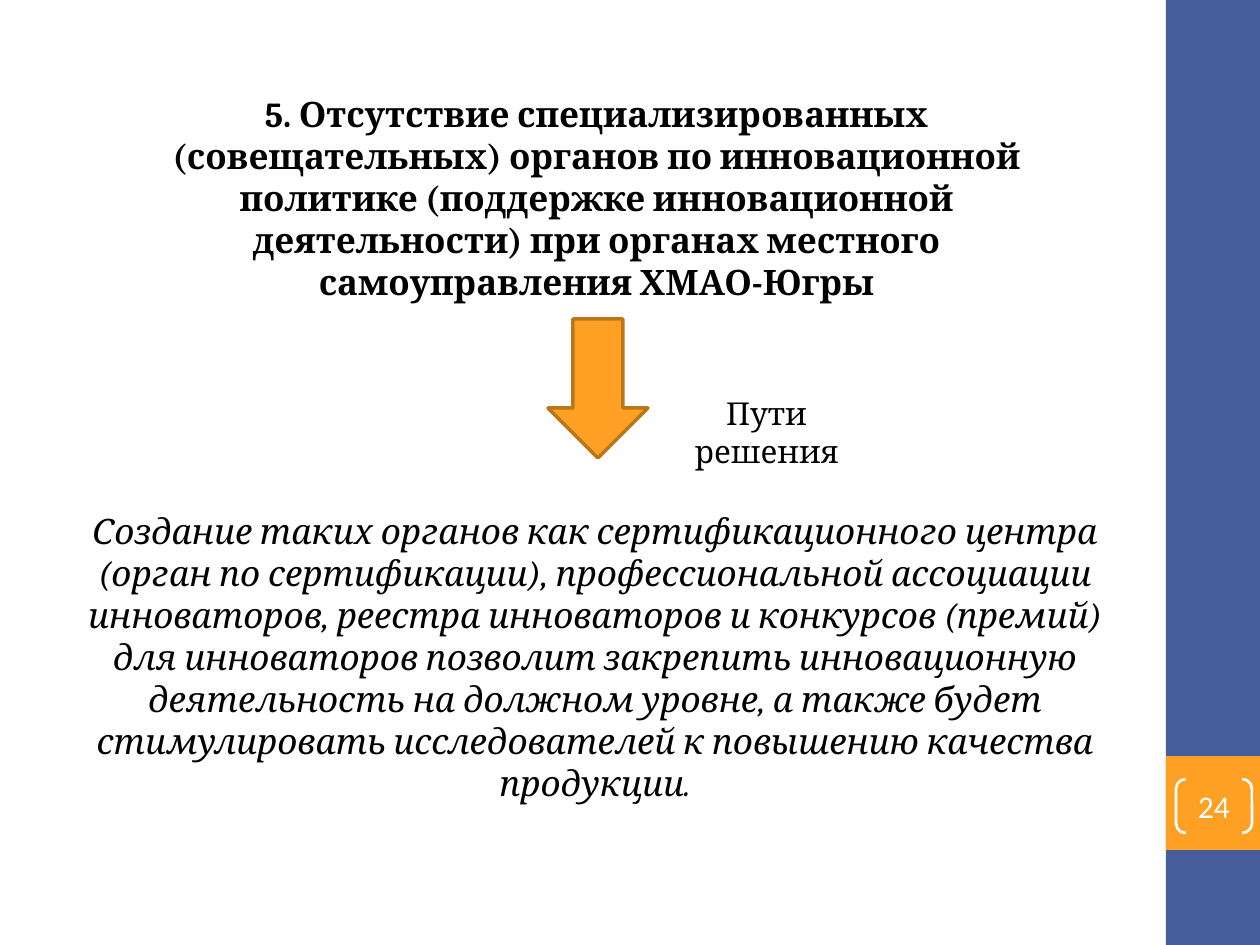
"""Builds the slide on missing advisory bodies and the proposed solution."""
from pptx import Presentation
from pptx import util as u
from pptx.dml.color import RGBColor
from pptx.enum import shapes, text
from pptx.oxml.ns import qn
from lxml import etree

PX = 914400 / 126
BLUE = RGBColor(0x46, 0x5E, 0x9C)
ORANGE = RGBColor(0xFD, 0xA0, 0x23)
BROWN = RGBColor(0xBB, 0x76, 0x1A)
WHITE = RGBColor(255, 255, 255)
BLACK = RGBColor(0, 0, 0)

PROBLEM = ("5. Отсутствие специализированных (совещательных) органов по "
           "инновационной политике (поддержке инновационной деятельности) "
           "при органах местного самоуправления ХМАО-Югры")
SOLUTION = ("Создание таких органов как сертификационного центра (орган по "
            "сертификации), профессиональной ассоциации инноваторов, реестра "
            "инноваторов и конкурсов (премий) для инноваторов позволит "
            "закрепить инновационную деятельность на должном уровне, а также "
            "будет стимулировать исследователей к повышению качества продукции.")


def px(*lengths):
    return [u.Emu(round(n * PX)) for n in lengths]


def place(sp, box):
    sp.left, sp.top, sp.width, sp.height = px(*box)


def add_shape(slide, kind, box, fill=None, line=None, width=1):
    sp = slide.shapes.add_shape(kind, *px(*box))
    sp.shadow.inherit = False
    if fill is None:
        sp.fill.background()
    else:
        sp.fill.solid()
        sp.fill.fore_color.rgb = fill
    if line is None:
        sp.line.fill.background()
    else:
        sp.line.color.rgb = line
        sp.line.width = u.Pt(width)
    return sp


def write(sp, content, size, font="Cambria", color=BLACK, bold=False,
          italic=False, anchor=text.MSO_ANCHOR.TOP):
    tf = sp.text_frame
    tf.word_wrap = True
    tf.auto_size = text.MSO_AUTO_SIZE.NONE
    tf.vertical_anchor = anchor
    p = tf.paragraphs[0]
    p.text = content
    p.alignment = text.PP_ALIGN.CENTER
    p.space_before = u.Pt(0)
    p.font.name, p.font.size = font, u.Pt(size)
    p.font.bold, p.font.italic = bold, italic
    p.font.color.rgb = color
    return p


def remove_bullet(p):
    props = p._p.get_or_add_pPr()
    props.set("marL", "0")
    props.set("indent", "0")
    etree.SubElement(props, qn("a:buNone"))


def add_page_number(slide, number):
    sp = add_shape(slide, shapes.MSO_SHAPE.DOUBLE_BRACKET, (1176, 779, 76, 54),
                   line=WHITE, width=1.5)
    sp.adjustments[0] = 0.18
    tf = sp.text_frame
    tf.margin_left = tf.margin_right = tf.margin_top = tf.margin_bottom = 0
    write(sp, number, 18, "Calibri", WHITE, anchor=text.MSO_ANCHOR.MIDDLE)


def main():
    prs = Presentation()
    prs.slide_width, prs.slide_height = px(1260, 945)
    slide = prs.slides.add_slide(prs.slide_layouts[1])

    add_shape(slide, shapes.MSO_SHAPE.RECTANGLE, (1166, 0, 94, 945), BLUE)
    add_shape(slide, shapes.MSO_SHAPE.RECTANGLE, (1166, 756, 94, 94), ORANGE)
    add_page_number(slide, "24")

    title, body = slide.placeholders
    place(title, (110, 86, 973, 183))
    write(title, PROBLEM, 20, bold=True)
    place(body, (74, 503, 1042, 267))
    remove_bullet(body.text_frame.paragraphs[0])
    write(body, SOLUTION, 20, italic=True)

    add_shape(slide, shapes.MSO_SHAPE.DOWN_ARROW, (548, 319, 100, 139),
              ORANGE, BROWN, 2)
    label = slide.shapes.add_textbox(*px(650, 388, 233, 50))
    write(label, "Пути решения", 18)
    prs.save("out.pptx")


if __name__ == "__main__":
    main()
